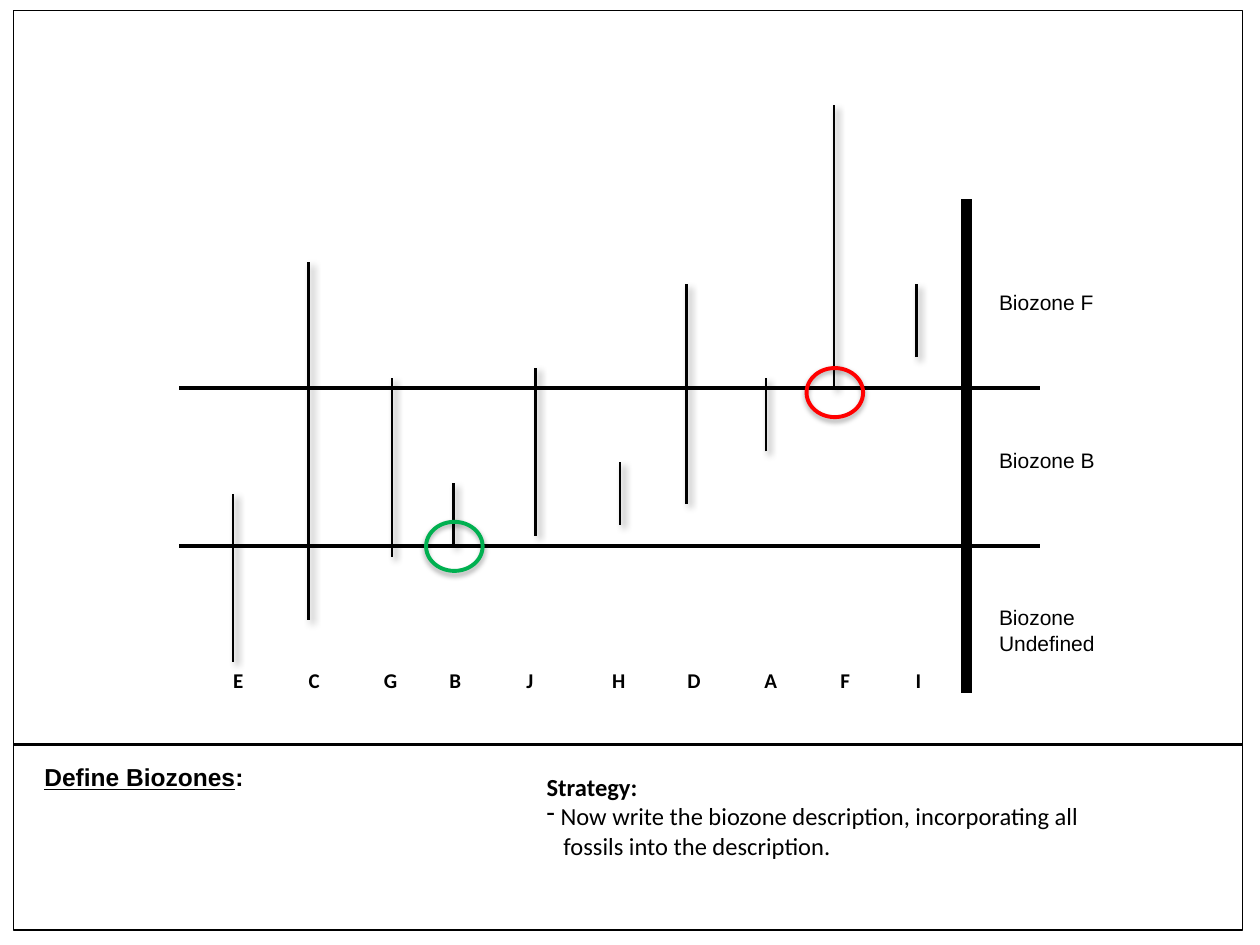
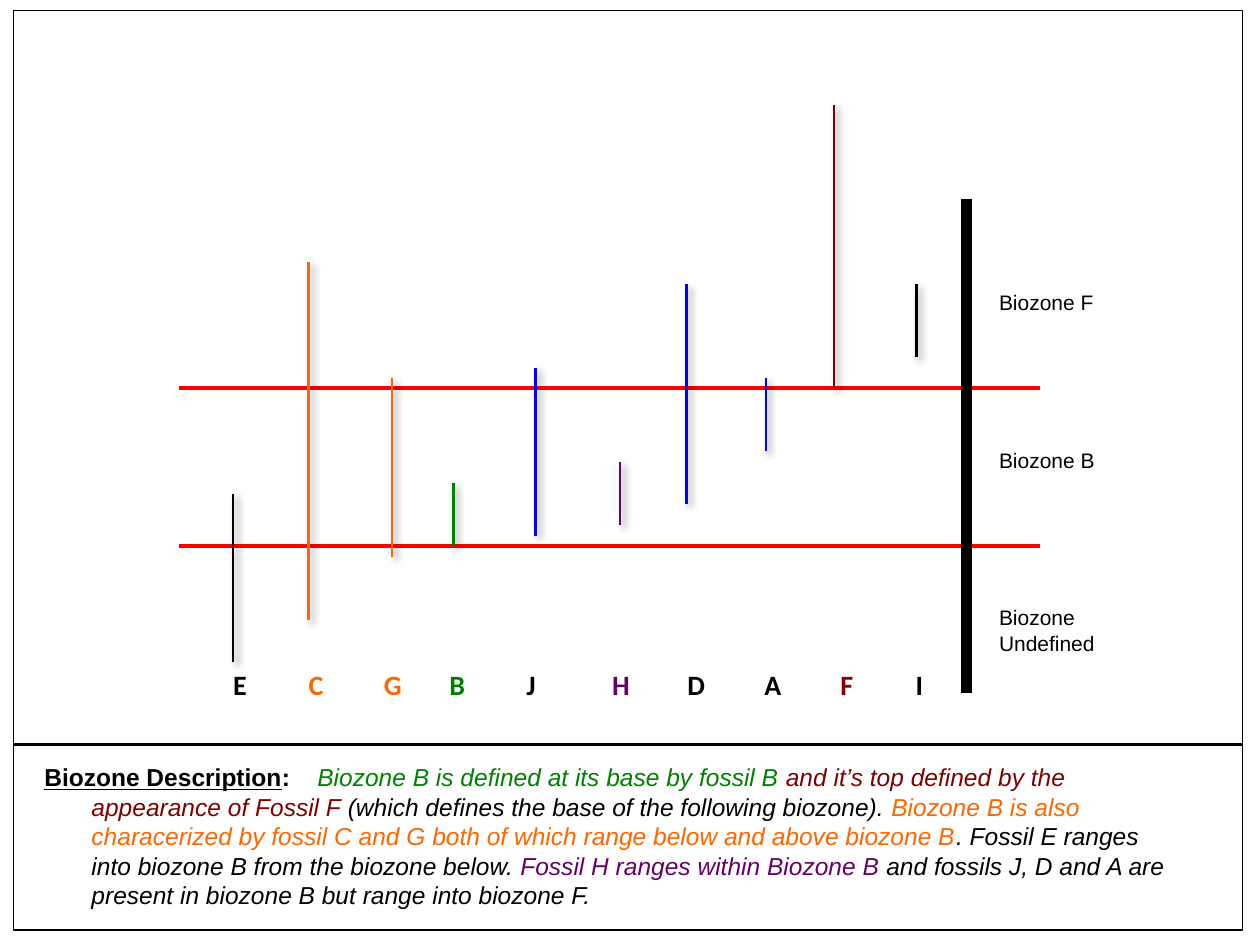
"""Build two slides that define and describe biozones from fossil ranges."""
from lxml import etree
from pptx import Presentation
from pptx.dml.color import RGBColor
from pptx.enum.shapes import MSO_CONNECTOR, MSO_SHAPE
from pptx.enum.text import MSO_ANCHOR, MSO_AUTO_SIZE, PP_ALIGN
from pptx.oxml.ns import qn
from pptx.util import Cm, Pt

STRAIGHT = MSO_CONNECTOR.STRAIGHT
RECT, OVAL = MSO_SHAPE.RECTANGLE, MSO_SHAPE.OVAL
TOP, LEFT, NO_FIT = MSO_ANCHOR.TOP, PP_ALIGN.LEFT, MSO_AUTO_SIZE.NONE
TITLE_ONLY = 5

BLACK, RED, BLUE = "000000", "FF0000", "0000FF"
GREEN, RING_GREEN = "008000", "00B050"
MAROON, ORANGE, PURPLE = "800000", "FF6600", "660066"

# name: (range x, label x, range top, range bottom), in cm
FOSSILS = {
    "E": (4.7, 4.45, 9.95, 13.34),
    "C": (6.22, 5.97, 5.29, 12.49),
    "G": (7.9, 7.49, 7.62, 11.22),
    "B": (9.14, 8.81, 9.74, 11.01),
    "J": (10.8, 10.36, 7.41, 10.8),
    "H": (12.5, 12.09, 9.31, 10.58),
    "D": (13.84, 13.61, 5.72, 10.16),
    "A": (15.44, 15.16, 7.62, 9.1),
    "F": (16.81, 16.69, 2.12, 7.83),
    "I": (18.47, 18.21, 5.72, 7.2),
}
LABEL_COLORS = {"C": ORANGE, "G": ORANGE, "B": GREEN, "H": PURPLE, "F": MAROON}
RANGE_COLORS = {**LABEL_COLORS, "J": BLUE, "D": BLUE, "A": BLUE}
LABEL_TOP = 13.34
BOUNDARIES = (7.83, 11.01)
ZONES = ("Biozone F", "Biozone B", "Biozone \nUndefined")
ZONE_TOP, ZONE_STEP = 5.72, 3.175
RANGE_SHADOW = (40, 4, 3, 45)
RING_SHADOW = (35, 3.1, 1.8, 90)


def rgb(color):
    """Return the colour for a hex string."""
    return RGBColor.from_string(color)


def set_effects(sp, shadow=None):
    """Replace inherited effects by none, or by (opacity, blur, distance, angle)."""
    effects = etree.SubElement(sp._element.spPr, qn("a:effectLst"))
    if shadow:
        opacity, blur, distance, angle = shadow
        outer = etree.SubElement(
            effects, qn("a:outerShdw"), blurRad=str(Pt(blur)), dist=str(Pt(distance)),
            dir=str(angle * 60000), rotWithShape="0")
        clr = etree.SubElement(outer, qn("a:srgbClr"), val=BLACK)
        etree.SubElement(clr, qn("a:alpha"), val=str(opacity * 1000))


def add_line(shapes, x1, y1, x2, y2, color=BLACK, width=1.5, shadow=None):
    """Draw a straight line."""
    line = shapes.add_connector(STRAIGHT, Cm(x1), Cm(y1), Cm(x2), Cm(y2))
    line.line.color.rgb = rgb(color)
    line.line.width = Pt(width)
    set_effects(line, shadow)


def add_outline(shapes, kind, x, y, w, h, color=BLACK, width=0.75, shadow=None):
    """Draw an unfilled preset shape."""
    sp = shapes.add_shape(kind, Cm(x), Cm(y), Cm(w), Cm(h))
    sp.fill.background()
    sp.line.color.rgb = rgb(color)
    sp.line.width = Pt(width)
    if shadow:
        set_effects(sp, shadow)
    else:
        sp.shadow.inherit = False


def add_run(p, text, size=12, font="Arial", color=BLACK, bold=False,
            italic=False, underline=False, spacing=0):
    """Add formatted text to a paragraph, with line breaks at newlines."""
    for i, part in enumerate(text.split("\n")):
        if i:
            p.add_line_break()
        r = p.add_run()
        r.text = part
        r.font.size, r.font.name = Pt(size), font
        r.font.color.rgb = rgb(color)
        r.font.bold, r.font.italic, r.font.underline = bold, italic, underline
        if spacing:
            r._r.get_or_add_rPr().set("spc", str(int(spacing * 100)))


def set_indent(p, margin, first=0.0, bullet=None):
    """Set the left margin and first-line indent, with an optional bullet."""
    pPr = p._p.get_or_add_pPr()
    pPr.set("marL", str(Cm(margin)))
    pPr.set("indent", str(Cm(first)))
    if bullet:
        etree.SubElement(pPr, qn("a:buChar"), char=bullet)


def add_text(shapes, x, y, w, h, text="", **fmt):
    """Add a wrapping text box and return its text frame."""
    tf = shapes.add_textbox(Cm(x), Cm(y), Cm(w), Cm(h)).text_frame
    tf.word_wrap = True
    if text:
        add_run(tf.paragraphs[0], text, **fmt)
    return tf


def add_title(slide, heading):
    """Place the underlined heading below the chart and return its paragraph."""
    title = slide.shapes.title
    title.left, title.top = Cm(0.64), Cm(15.24)
    title.width, title.height = Cm(23.29), Cm(3.39)
    tf = title.text_frame
    tf.word_wrap, tf.auto_size, tf.vertical_anchor = True, NO_FIT, TOP
    p = tf.paragraphs[0]
    p.alignment, p.space_before = LEFT, Pt(2.8)
    set_indent(p, 0.95, -0.95)
    add_run(p, heading, size=14, bold=True, underline=True)
    add_run(p, ":", size=14, bold=True)
    return p


def add_fossil(shapes, name, range_color, label_color, label_size):
    """Draw one fossil's range and label as a group."""
    x, label_x, top, bottom = FOSSILS[name]
    group = shapes.add_group_shape().shapes
    add_line(group, x, bottom, x, top, range_color, shadow=RANGE_SHADOW)
    add_text(group, label_x, LABEL_TOP, 0.9, 0.76, name, size=label_size,
             font="Calibri", color=label_color, bold=True)


def add_range_chart(shapes, boundary_color=BLACK, range_colors={}, label_colors={},
                    label_size=12):
    """Draw the frames, fossil ranges, zone boundaries and zone names."""
    for y, h in ((0.21, 14.81), (14.99, 3.76)):
        add_outline(shapes, RECT, 0.28, y, 24.77, h)
    for y in BOUNDARIES:
        add_line(shapes, 3.61, y, 20.96, y, boundary_color, 2.25)
    add_line(shapes, 19.48, 4.02, 19.48, 13.97, width=6)
    for name in FOSSILS:
        add_fossil(shapes, name, range_colors.get(name, BLACK),
                   label_colors.get(name, BLACK), label_size)
    for i, zone in enumerate(ZONES):
        add_text(shapes, 19.89, ZONE_TOP + i * ZONE_STEP, 2.7, 0.76, zone)


def build_definition(prs):
    """Build the slide that marks the zone bases and gives the strategy."""
    slide = prs.slides.add_slide(prs.slide_layouts[TITLE_ONLY])
    add_title(slide, "Define Biozones")
    add_range_chart(slide.shapes)
    for x, y, color in ((16.26, 7.42, RED), (8.59, 10.52, RING_GREEN)):
        add_outline(slide.shapes, OVAL, x, y, 1.14, 0.99, color, 2.25, RING_SHADOW)
    body = {"size": 14, "font": "Calibri"}
    tf = add_text(slide.shapes, 10.77, 15.44, 12, 2.06, "Strategy:", bold=True, **body)
    p = tf.add_paragraph()
    set_indent(p, 0.28, -0.28, "-")
    add_run(p, "Now write the biozone description, incorporating all", **body)
    p = tf.add_paragraph()
    set_indent(p, 0.34)
    add_run(p, "fossils into the description.", **body)


def build_description(prs):
    """Build the slide that describes Biozone B in matching colours."""
    slide = prs.slides.add_slide(prs.slide_layouts[TITLE_ONLY])
    p = add_title(slide, "Biozone Description")
    add_run(p, " ", size=14, bold=True, spacing=11.7)
    for text, color in (
        ("Biozone B is defined at its base by fossil B ", GREEN),
        ("and it’s top defined by the appearance of Fossil F ", MAROON),
        ("(which defines the base of the following biozone). ", BLACK),
        ("Biozone B is also characerized by fossil C and G both of which "
         "range below and above biozone B", ORANGE),
        (". Fossil E ranges into biozone B from the biozone below. ", BLACK),
        ("Fossil H ranges within Biozone B ", PURPLE),
        ("and fossils J, D and A are present in biozone B but range into "
         "biozone F.", BLACK),
    ):
        add_run(p, text, size=14, color=color, italic=True)
    add_range_chart(slide.shapes, RED, RANGE_COLORS, LABEL_COLORS, 16)


def main():
    """Create and save the presentation."""
    prs = Presentation()
    prs.slide_width, prs.slide_height = Cm(25.4), Cm(19.05)
    build_definition(prs)
    build_description(prs)
    prs.save("out.pptx")


if __name__ == "__main__":
    main()
